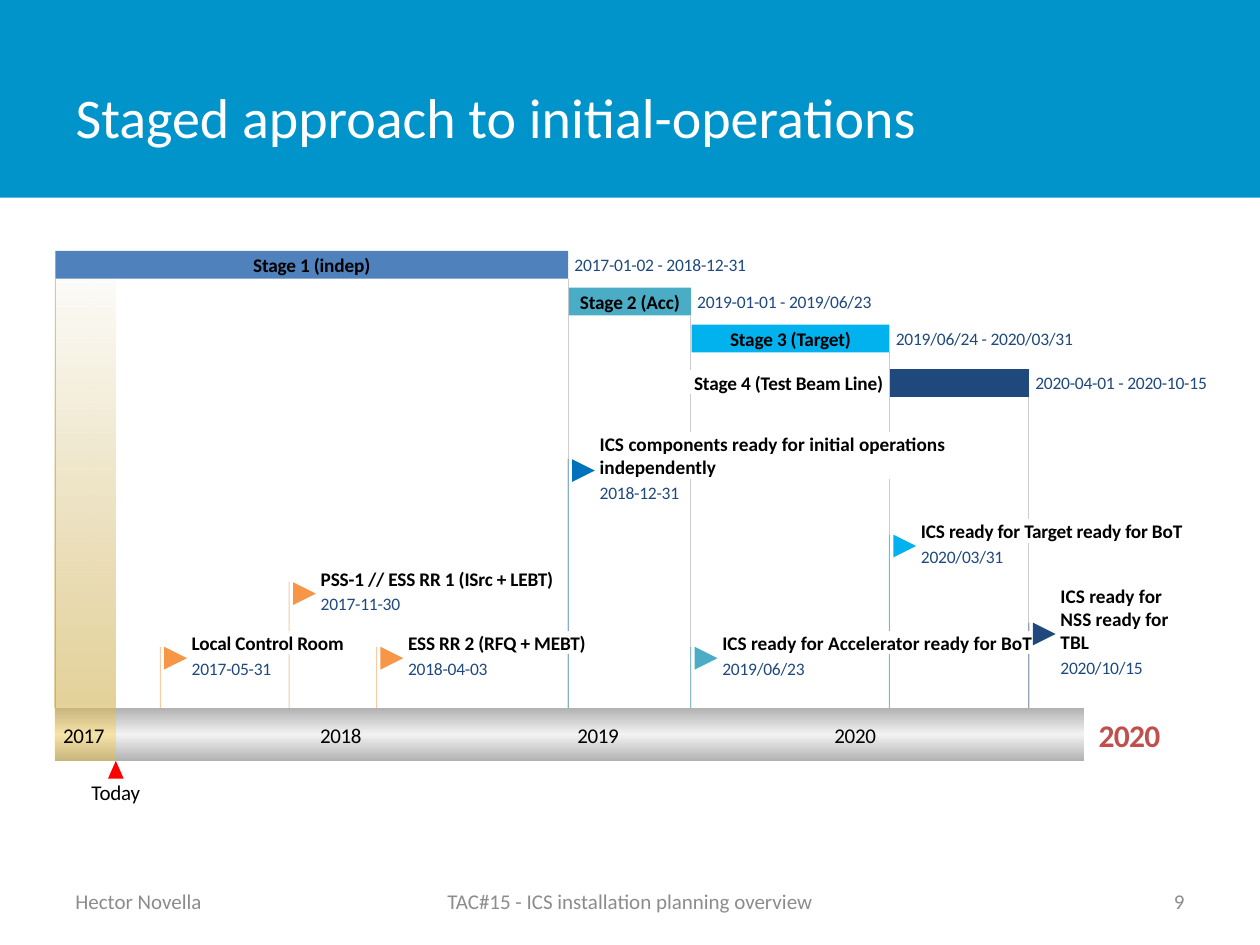
import pptx
import pptx.dml.color
import pptx.enum.shapes
import pptx.enum.text
import pptx.oxml
import pptx.oxml.ns
import pptx.util
from lxml import etree

Pt = pptx.util.Pt
SHAPE = pptx.enum.shapes.MSO_SHAPE
ALIGN = pptx.enum.text.PP_ALIGN
MIDDLE = pptx.enum.text.MSO_ANCHOR.MIDDLE
qn = pptx.oxml.ns.qn

FONT = "Calibri"
DATE_COLOR = "1F497E"
AXIS_LEFT, AXIS_TOP, AXIS_WIDTH, AXIS_HEIGHT = 31.2, 404.6, 588.2, 30.2
TODAY_X = 66.2
BAR_HEIGHT = 15.9
LINE_HEIGHT = 13.4
LOW_TITLES = (360.7, 373.7)
DAYS_BEFORE_MONTH = (0, 31, 59, 90, 120, 151, 181, 212, 243, 273, 304, 334)

STAGES = [
    ("Stage 1 (indep)", "2017-01-02 - 2018-12-31", 143.3, "4F81BD"),
    ("Stage 2 (Acc)", "2019-01-01 - 2019/06/23", 164.4, "4BACC6"),
    ("Stage 3 (Target)", "2019/06/24 - 2020/03/31", 185.5, "02B2EE"),
    ("Stage 4 (Test Beam Line)", "2020-04-01 - 2020-10-15", 210.9, "1F497D"),
]
# title, date, top, width, lines, tracking, colour
MILESTONES = [
    ("ICS components ready for initial operations independently", "2018-12-31", 246.8, 200.2, 2, 0, "0072BC"),
    ("ICS ready for Accelerator ready for BoT", "2019/06/23", 360.7, 180, 1, 0, "4BACC6"),
    ("ICS ready for Target ready for BoT", "2020/03/31", 296.6, 156, 1, -0.1, "02B2EE"),
    ("ICS ready for NSS ready for TBL", "2020/10/15", 333.5, 65, 3, 0, "1F497D"),
    ("Local Control Room", "2017-05-31", 360.7, 92, 1, -0.1, "F79646"),
    ("PSS-1 // ESS RR 1 (ISrc + LEBT)", "2017-11-30", 323.8, 140, 1, -0.1, "F79646"),
    ("ESS RR 2 (RFQ + MEBT)", "2018-04-03", 360.7, 107, 1, -0.1, "F79646"),
]
GUIDES = [
    ("2020-10-15", 226.8, [(296.6, 310.3), LOW_TITLES]),
    ("2020-03-31", 201.4, [(246.8, 273.6), LOW_TITLES]),
    ("2019-06-23", 180.4, [(211.7, 225.4), (246.8, 273.6)]),
    ("2018-12-31", 159.2, [LOW_TITLES]),
    ("2017-01-02", 159.2, []),
]


def rgb(value):
    """Turn a hex string into a colour."""
    return pptx.dml.color.RGBColor.from_string(value)


def date_x(date):
    """Return the horizontal position of a date on the time axis."""
    year, month, day = map(int, date.replace("/", "-").split("-"))
    leap_day = year == 2020 and month > 2
    days = (year - 2017) * 365 + DAYS_BEFORE_MONTH[month - 1] + day - 2 + leap_day
    return round(31.6 + days * 0.4026, 2)


def set_alpha(color_parent, percent):
    """Make the colour inside an element partly transparent."""
    color = color_parent.find(".//" + qn("a:srgbClr"))
    etree.SubElement(color, qn("a:alpha")).set("val", str(percent * 1000))


def add_block(slide, kind, left, top, width, height, color):
    """Add a plain filled shape without outline."""
    block = slide.shapes.add_shape(kind, Pt(left), Pt(top), Pt(width), Pt(height))
    block.shadow.inherit = False
    block.line.fill.background()
    block.fill.solid()
    block.fill.fore_color.rgb = rgb(color)
    return block


def set_gradient(block, stops):
    """Fill a block from top to bottom with (position, colour, alpha) stops."""
    gradient = "".join(
        f'<a:gs pos="{position * 1000}"><a:srgbClr val="{color}">'
        f'<a:alpha val="{alpha * 1000}"/></a:srgbClr></a:gs>'
        for position, color, alpha in stops
    )
    solid = block.element.spPr.find(qn("a:solidFill"))
    solid.getparent().replace(solid, pptx.oxml.parse_xml(
        f'<a:gradFill {pptx.oxml.ns.nsdecls("a")} rotWithShape="1"><a:gsLst>{gradient}</a:gsLst>'
        '<a:lin ang="5400000" scaled="0"/></a:gradFill>'
    ))


def add_dark_shadow(block):
    """Lay a half-transparent black shadow right behind a block."""
    effects = block.element.spPr.find(qn("a:effectLst"))
    shadow = etree.SubElement(effects, qn("a:outerShdw"), blurRad="0", dist="0", dir="0")
    etree.SubElement(shadow, qn("a:srgbClr"), val="000000")
    set_alpha(shadow, 50)


def format_text(frame, text, size, color, bold=False, align=ALIGN.LEFT, tracking=0):
    """Write and format one paragraph, centred vertically."""
    frame.text = text
    frame.word_wrap = True
    frame.vertical_anchor = MIDDLE
    paragraph = frame.paragraphs[0]
    paragraph.alignment = align
    for run in paragraph.runs:
        run.font.name = FONT
        run.font.size = Pt(size)
        run.font.bold = bold
        run.font.color.rgb = rgb(color)
        if tracking:
            run.font._element.set("spc", str(round(tracking * 100)))


def add_label(slide, text, left, top, width, height, size, color, inset=0, **style):
    """Add a text box with even side insets."""
    box = slide.shapes.add_textbox(Pt(left), Pt(top), Pt(width), Pt(height))
    frame = box.text_frame
    frame.margin_left = frame.margin_right = Pt(inset)
    frame.margin_top = frame.margin_bottom = 0
    format_text(frame, text, size, color, **style)


def add_date(slide, text, left, top, width):
    """Add a small blue date."""
    add_label(slide, text, left, top, width, 12.2, 10, DATE_COLOR, tracking=-0.1)


def add_drop_line(slide, x, top, gaps, color, alpha=100):
    """Draw a vertical line down to the axis, leaving out the gaps."""
    starts = [top] + [end for _, end in gaps]
    ends = [start for start, _ in gaps] + [AXIS_TOP]
    for start, end in zip(starts, ends):
        line = slide.shapes.add_connector(
            pptx.enum.shapes.MSO_CONNECTOR.STRAIGHT, Pt(x), Pt(start), Pt(x), Pt(end))
        line.line.width = Pt(0.6)
        line.line.color.rgb = rgb(color)
        set_alpha(line.element.spPr, alpha)
        etree.SubElement(line.element.spPr, qn("a:effectLst"))


def flag_top(top, lines):
    """Return the top of the flag beside a milestone title."""
    return round(top + lines * LINE_HEIGHT / 2 + 2.2, 2)


def add_milestone(slide, title, date, top, width, lines, tracking, color):
    """Add a flag with its title and date."""
    x = date_x(date)
    height = lines * LINE_HEIGHT
    add_label(slide, title, x + 18, top, width, height, 11, "000000", bold=True, tracking=tracking)
    add_date(slide, date, x + 18, top + height + 1.8, 64)
    flag = add_block(slide, SHAPE.FLOWCHART_MERGE, x + 2.2, flag_top(top, lines), 13, 13, color)
    flag.rotation = 270


def add_stage(slide, name, period, top, color):
    """Add a stage bar with its name and period."""
    start, end = map(date_x, period.split(" - "))
    add_block(slide, SHAPE.RECTANGLE, start, top, end - start, BAR_HEIGHT, color)
    add_date(slide, period, end + 3.6, top + 1.6, 110)
    inside = end - start if "Beam" not in name else 0
    left, width, align = (start, inside, ALIGN.CENTER) if inside else (start - 116, 112, ALIGN.RIGHT)
    add_label(slide, name, left, top + 1.2, width, LINE_HEIGHT, 11, "000000",
              bold=True, align=align, tracking=-0.1)


def add_axis(slide):
    """Add the time axis with its elapsed part, years and today mark."""
    elapsed_width = TODAY_X - AXIS_LEFT
    band = add_block(slide, SHAPE.RECTANGLE, AXIS_LEFT, 143.3, elapsed_width, AXIS_TOP - 143.3, "FFC000")
    set_gradient(band, [(0, "FFC000", 0), (100, "FFC000", 30)])
    add_dark_shadow(band)
    add_label(slide, "2020", 620, 409, 51, 22.3, 18, "C0504D", bold=True, align=ALIGN.CENTER, tracking=-0.4)
    axis = add_block(slide, SHAPE.RECTANGLE, AXIS_LEFT, AXIS_TOP, AXIS_WIDTH, AXIS_HEIGHT, "B2B2B2")
    set_gradient(axis, [(0, "B2B2B2", 100), (50, "F2F2F2", 100), (100, "B2B2B2", 100)])
    elapsed = add_block(slide, SHAPE.RECTANGLE, AXIS_LEFT, AXIS_TOP, elapsed_width, AXIS_HEIGHT, "FFC000")
    set_alpha(elapsed.element.spPr, 30)
    add_block(slide, SHAPE.ISOSCELES_TRIANGLE, TODAY_X - 4.5, 434.8, 9, 10.2, "FF0000")
    add_label(slide, "Today", TODAY_X - 16, 445.2, 32, 14.6, 12, "000000", align=ALIGN.CENTER, tracking=-0.1)
    for year in range(2017, 2021):
        add_label(slide, str(year), date_x(f"{year}-01-01") + 4.8, 412.6, 26, 14.6, 12, "000000", tracking=-0.2)


def add_header_and_footer(slide):
    """Format the title on its band and add the footer texts."""
    title = slide.shapes.title
    title.left, title.top, title.width, title.height = Pt(36), Pt(21.6), Pt(562.3), Pt(90)
    format_text(title.text_frame, "Staged approach to initial-operations", 32, "FFFFFF")
    band = add_block(slide, SHAPE.RECTANGLE, 0, 0, 720, 113, "0094CA")
    title.element.addprevious(band.element)
    for text, left, width, align in [
        ("Hector Novella", 36, 168, ALIGN.LEFT),
        ("TAC#15 - ICS installation planning overview", 246, 228, ALIGN.CENTER),
        ("9", 516, 168, ALIGN.RIGHT),
    ]:
        add_label(slide, text, left, 500.5, width, 28.8, 12, "8C8C8C", inset=7.2, align=align)


def main():
    """Build the slide and save it."""
    deck = pptx.Presentation()
    deck.slide_width, deck.slide_height = Pt(720), Pt(540)
    slide = deck.slides.add_slide(deck.slide_layouts[5])
    add_header_and_footer(slide)
    for date, top, gaps in GUIDES:
        add_drop_line(slide, date_x(date), top, gaps, "CCCCCC")
    for _, date, top, _, lines, _, color in MILESTONES:
        start = flag_top(top, lines)
        gaps = [LOW_TITLES] if start < LOW_TITLES[0] else []
        add_drop_line(slide, date_x(date), start, gaps, color, 50)
    add_axis(slide)
    for milestone in MILESTONES:
        add_milestone(slide, *milestone)
    for stage in STAGES:
        add_stage(slide, *stage)
    deck.save("out.pptx")


if __name__ == "__main__":
    main()
